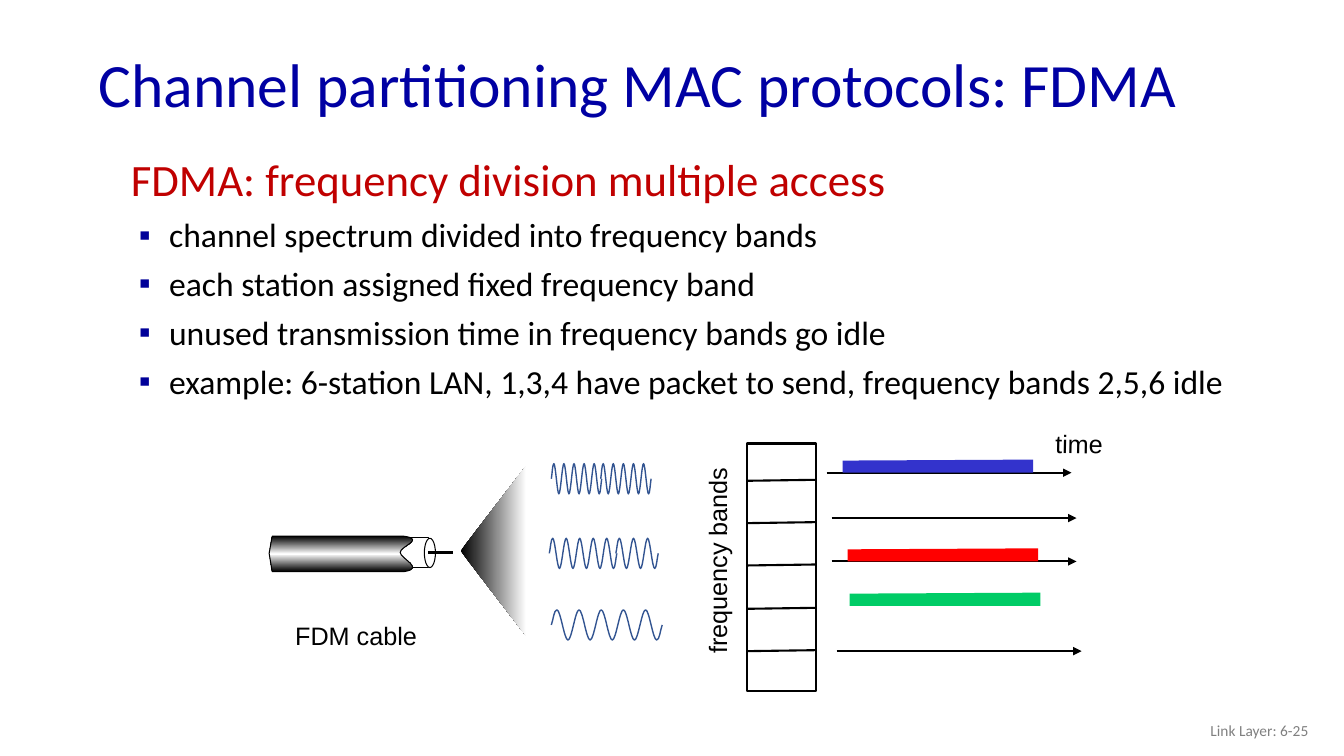
from itertools import chain

from lxml import etree
from pptx import Presentation
from pptx.dml.color import RGBColor
from pptx.enum.shapes import MSO_CONNECTOR, MSO_SHAPE
from pptx.enum.text import MSO_ANCHOR, PP_ALIGN
from pptx.oxml import parse_xml
from pptx.oxml.ns import nsdecls, qn
from pptx.util import Pt

EMU_PER_PX = 9144  # 100 px to the inch
BLACK, WHITE = "000000", "FFFFFF"
WAVE_BLUE = "325491"

BULLETS = [
    "channel spectrum divided into frequency bands",
    "each station assigned fixed frequency band",
    "unused transmission time in frequency bands go idle",
    "example: 6-station LAN, 1,3,4 have packet to send, frequency bands 2,5,6 idle",
]
# left, top, cycles, width
WAVES = [
    (2, 0, 5, 50), (51, 0, 5, 50),
    (0, 74, 5, 67), (66, 74, 3, 42),
    (2, 145, 5, 110),
]
# left, baseline, colour of the packet, has a time arrow
CHANNELS = [
    (0, 0, "3333CC", True),
    (5, 45, None, True),
    (5, 88, "FF0000", True),
    (7, 132, "00CC66", False),
    (10, 177, None, True),
]


def px(value):
    return round(value * EMU_PER_PX)


def color(hex_string):
    return RGBColor.from_string(hex_string)


def apply(target, formats):
    for name, value in formats.items():
        setattr(target, name, value)


def paint(shape, fill=None, line=None, weight=0.75):
    shape.shadow.inherit = False
    if fill:
        shape.fill.solid()
        shape.fill.fore_color.rgb = color(fill)
    else:
        shape.fill.background()
    if line:
        shape.line.color.rgb = color(line)
        shape.line.width = Pt(weight)
    else:
        shape.line.fill.background()


def paint_gradient(shape, colors, degrees):
    """Spread the colours evenly along the given direction."""
    stops = "".join(
        f'<a:gs pos="{100000 * i // (len(colors) - 1)}"><a:srgbClr val="{c}"/></a:gs>'
        for i, c in enumerate(colors))
    gradient = parse_xml(
        f'<a:gradFill {nsdecls("a")} rotWithShape="1"><a:gsLst>{stops}</a:gsLst>'
        f'<a:lin ang="{degrees * 60000}" scaled="0"/></a:gradFill>')
    properties = shape._element.spPr
    properties.replace(properties.find(qn("a:noFill")), gradient)


def add_preset(slide, kind, box, **style):
    shape = slide.shapes.add_shape(kind, *map(px, box))
    paint(shape, **style)


def add_outline(slide, left, top, start, steps, close=True, **style):
    """Draw steps of one point as lines and steps of three points as curves."""
    (x, y), *rest = [(px(left + x), px(top + y)) for x, y in chain([start], *steps)]
    builder = slide.shapes.build_freeform(x, y)
    builder.add_line_segments(rest, close=close)
    shape = builder.convert_to_shape()
    segments = iter(list(shape._element.iter(qn("a:lnTo"))))
    for step in steps:
        first, *others = [next(segments) for _ in step]
        if others:
            first.tag = qn("a:cubicBezTo")
            for segment in others:
                first.append(segment[0])
                segment.getparent().remove(segment)
    paint(shape, **style)
    return shape


def add_line(slide, start, end, weight=1.5, arrow=False):
    line = slide.shapes.add_connector(
        MSO_CONNECTOR.STRAIGHT, *map(px, (*start, *end)))
    line.line.color.rgb = color(BLACK)
    line.line.width = Pt(weight)
    if arrow:
        etree.SubElement(line.line._get_or_add_ln(), qn("a:tailEnd"), type="triangle")
    etree.SubElement(line._element.spPr, qn("a:effectLst"))


def write(paragraph, text, size, font, ink, **formats):
    run = paragraph.add_run()
    run.text = text
    apply(run.font, {"size": Pt(size), "name": font})
    run.font.color.rgb = color(ink)
    apply(paragraph, formats)


def add_frame(slide, box, **formats):
    shape = slide.shapes.add_textbox(*map(px, box))
    apply(shape.text_frame, {"word_wrap": True, **formats})
    return shape


def add_label(slide, text, box, rotation=0):
    label = add_frame(slide, box, word_wrap=False)
    label.rotation = rotation
    write(label.text_frame.paragraphs[0], text, 18, "Arial", BLACK)


def set_indent(paragraph, margin, first, bullet=None):
    properties = paragraph._p.get_or_add_pPr()
    properties.set("marL", str(px(margin)))
    properties.set("indent", str(px(first)))
    if bullet:
        tint = etree.SubElement(properties, qn("a:buClr"))
        etree.SubElement(tint, qn("a:srgbClr"), val="000099")
        etree.SubElement(properties, qn("a:buFont"), typeface="Arial")
        etree.SubElement(properties, qn("a:buChar"), char=bullet)


def draw_title(slide, box):
    frame = add_frame(slide, box, vertical_anchor=MSO_ANCHOR.MIDDLE).text_frame
    write(frame.paragraphs[0], "Channel partitioning MAC protocols: FDMA",
          44, "Calibri", "0000A3", line_spacing=0.9)


def draw_page_number(slide, box):
    frame = add_frame(slide, box, vertical_anchor=MSO_ANCHOR.MIDDLE).text_frame
    write(frame.paragraphs[0], "Link Layer: 6-25",
          11, "Calibri", "808080", alignment=PP_ALIGN.RIGHT)


def draw_body(slide, box):
    frame = add_frame(slide, box).text_frame
    heading = frame.paragraphs[0]
    write(heading, "FDMA: frequency division multiple access", 32, "Calibri",
          "C00000", line_spacing=0.85, space_before=Pt(6))
    set_indent(heading, 38, -38)
    for text in BULLETS:
        item = frame.add_paragraph()
        write(item, text, 24, "Calibri", BLACK, space_before=Pt(6))
        set_indent(item, 38, -30, "▪")


def draw_cable(slide, left, top):
    add_preset(slide, MSO_SHAPE.RECTANGLE, (left + 129, top + 1, 29, 30),
               fill=WHITE, line=BLACK)
    sheath = [[(0, 17)], [(3, 35)], [(134, 35)],
              [(155, 32), (130, 22), (130, 16)],
              [(130, 10), (155, 3), (134, 0)], [(3, 0)]]
    body = add_outline(slide, left, top, (3, 0), sheath, line=BLACK)
    paint_gradient(body, [BLACK, WHITE, BLACK], 90)
    add_preset(slide, MSO_SHAPE.OVAL, (left + 154, top + 2, 11, 29),
               fill=WHITE, line=BLACK)
    add_line(slide, (left + 158, top + 16), (left + 182, top + 16), weight=2.25)
    add_label(slide, "FDM cable", (left + 16, top + 78, 141, 40))


def draw_cone(slide, left, top, width, height):
    sides = [[(0, height / 2)], [(width, height)], [(width, 0)]]
    cone = add_outline(slide, left, top, (width, 0), sides)
    paint_gradient(cone, [BLACK, WHITE], 0)


def draw_waves(slide, left, top, amplitude=15):
    for dx, dy, cycles, width in WAVES:
        half = width / cycles / 2
        x, y = half / 2, 0
        steps = [[(x / 3, amplitude * 2 / 3), (x / 2, 0), (x, 0)]]
        for _ in range(2 * cycles - 1):
            next_y = 2 * amplitude - y
            steps.append([(x + half / 3, y), (x + half * 2 / 3, next_y),
                          (x + half, next_y)])
            x, y = x + half, next_y
        steps.append([(x + half / 4, y), (x + half / 3, amplitude * 4 / 3),
                      (width, amplitude)])
        add_outline(slide, left + dx, top + dy, (0, amplitude), steps,
                    close=False, line=WAVE_BLUE, weight=1)


def draw_bands(slide, left, top, width, height):
    add_preset(slide, MSO_SHAPE.RECTANGLE, (left, top, width, height),
               fill=WHITE, line=BLACK, weight=1.5)
    for i in range(5):
        y = top + round(37 + 42.2 * i)
        add_line(slide, (left, y), (left + width, y - 1))
    add_label(slide, "frequency bands", (left - 132, top + 96, 205, 40), 270)


def draw_channels(slide, left, top):
    for dx, dy, packet, has_arrow in CHANNELS:
        x, y = left + dx, top + dy
        if has_arrow:
            add_line(slide, (x, y), (x + 243, y), arrow=True)
        if packet:
            add_outline(slide, x + 16, y, (0, 0), [[(0, -12)], [(189, -13)], [(189, 0)]],
                        fill=packet)
    add_label(slide, "time", (left + 217, top - 49, 67, 40), 1.1)


def main():
    deck = Presentation()
    apply(deck, {"slide_width": px(4000 / 3), "slide_height": px(750)})
    slide = deck.slides.add_slide(deck.slide_layouts[6])
    draw_title(slide, (88, 38, 1150, 98))
    draw_page_number(slide, (1008, 705, 300, 40))
    draw_body(slide, (120, 154, 1144, 262))
    draw_bands(slide, 741, 440, 69, 246)
    draw_channels(slide, 820, 469)
    draw_cone(slide, 457, 462, 65, 169)
    draw_cable(slide, 267, 532)
    draw_waves(slide, 545, 460)
    deck.save("out.pptx")


if __name__ == "__main__":
    main()
